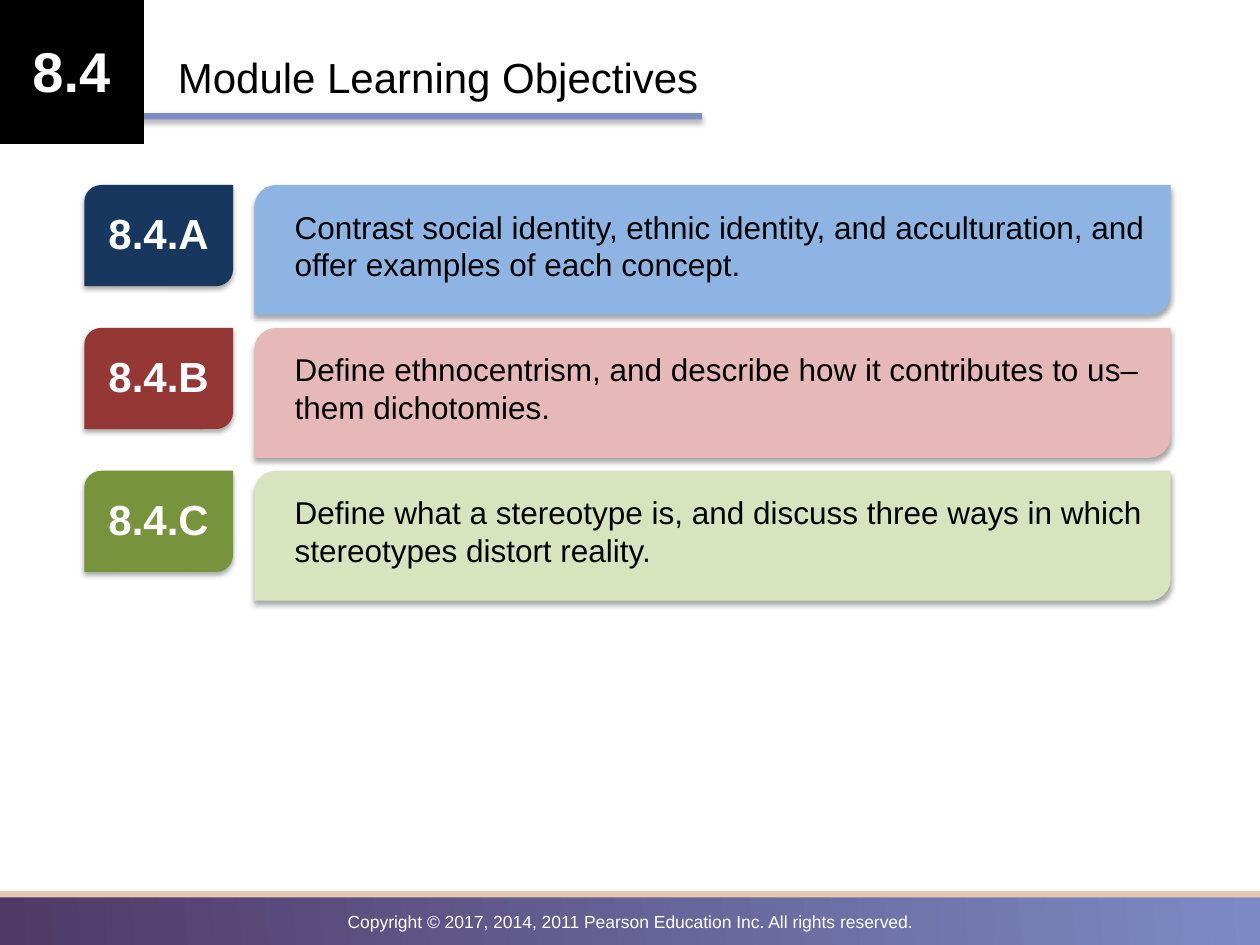
from lxml import etree
from pptx import Presentation
from pptx import util as u
from pptx.dml.color import RGBColor
from pptx.enum import shapes, text
from pptx.oxml.ns import qn

BLACK = RGBColor(0x00, 0x00, 0x00)
WHITE = RGBColor(0xFF, 0xFF, 0xFF)
PURPLE = RGBColor(0x4F, 0x39, 0x67)
PERIWINKLE = RGBColor(0x7C, 0x8B, 0xC4)
PEACH = RGBColor(0xE7, 0xC8, 0xB3)
NAVY = RGBColor(0x17, 0x37, 0x5E)
LIGHT_BLUE = RGBColor(0x8E, 0xB4, 0xE3)
RED = RGBColor(0x95, 0x37, 0x35)
PINK = RGBColor(0xE6, 0xB9, 0xB8)
GREEN = RGBColor(0x77, 0x93, 0x3C)
LIGHT_GREEN = RGBColor(0xD7, 0xE4, 0xBD)

RECT = shapes.MSO_SHAPE.RECTANGLE
TAB = shapes.MSO_SHAPE.ROUND_2_DIAG_RECTANGLE
CENTER = text.PP_ALIGN.CENTER
LEFT = text.PP_ALIGN.LEFT

OBJECTIVES = [
    ("8.4.A", NAVY, LIGHT_BLUE,
     "Contrast social identity, ethnic identity, and acculturation, "
     "and offer examples of each concept."),
    ("8.4.B", RED, PINK,
     "Define ethnocentrism, and describe how it contributes to "
     "us–them dichotomies."),
    ("8.4.C", GREEN, LIGHT_GREEN,
     "Define what a stereotype is, and discuss three ways in which "
     "stereotypes distort reality."),
]
FIRST_ROW = 3.73
ROW_PITCH = 2.88


class ModuleSlide:
    """Holds the text style and the slide being built; lengths are in cm."""
    font = "Arial"

    def __init__(self, slide):
        self.slide = slide

    def shape(self, kind, left, top, width, height, color, shadow=False):
        box = self.slide.shapes.add_shape(
            kind, u.Cm(left), u.Cm(top), u.Cm(width), u.Cm(height))
        box.shadow.inherit = False
        box.fill.solid()
        box.fill.fore_color.rgb = color
        box.line.fill.background()
        if shadow:
            self.drop_shadow(box)
        return box

    def drop_shadow(self, box):
        effects = box._element.spPr.find(qn("a:effectLst"))
        outer = etree.SubElement(
            effects, qn("a:outerShdw"), blurRad="40000", dist="23000",
            dir="5400000", rotWithShape="0")
        color = etree.SubElement(outer, qn("a:srgbClr"), val=str(BLACK))
        etree.SubElement(color, qn("a:alpha"), val="35000")

    def gradient(self, box, start, end, angle):
        box.fill.gradient()
        box.fill.gradient_angle = angle
        for stop, color in zip(box.fill.gradient_stops, (start, end)):
            stop.color.rgb = color

    def text(self, words, left, top, width, height, size, color,
             align=LEFT, bold=False):
        box = self.slide.shapes.add_textbox(
            u.Cm(left), u.Cm(top), u.Cm(width), u.Cm(height))
        self.set_words(box, words, size, color, align, bold)

    def title(self, words, left, top, width, height, size):
        box = self.slide.shapes.title
        box.left, box.top = u.Cm(left), u.Cm(top)
        box.width, box.height = u.Cm(width), u.Cm(height)
        self.set_words(box, words, size, BLACK, LEFT, False)

    def set_words(self, box, words, size, color, align, bold):
        frame = box.text_frame
        frame.text = words
        frame.word_wrap = True
        frame.vertical_anchor = text.MSO_ANCHOR.TOP
        frame.auto_size = text.MSO_AUTO_SIZE.SHAPE_TO_FIT_TEXT
        para = frame.paragraphs[0]
        para.alignment = align
        font = para.runs[0].font
        font.name, font.size, font.bold = self.font, u.Pt(size), bold
        font.color.rgb = color

    def objective(self, top, label, dark, light, words):
        self.shape(TAB, 1.7, top, 3, 2.04, dark, shadow=True)
        self.text(label, 1.7, top + 0.33, 3, 1.28, 24, WHITE, CENTER, True)
        self.shape(TAB, 5.13, top, 18.47, 2.62, light, shadow=True)
        self.text(words, 5.69, top + 0.33, 17.75, 1.8, 18, BLACK)


def main():
    deck = Presentation()
    deck.slide_width, deck.slide_height = u.Cm(25.4), u.Cm(19.05)
    page = ModuleSlide(deck.slides.add_slide(deck.slide_layouts[5]))

    footer = page.shape(RECT, 0, 17.98, 25.4, 1.14, PURPLE)
    page.gradient(footer, PURPLE, PERIWINKLE, 4)
    page.shape(RECT, 0, 17.96, 25.53, 0.13, PEACH)
    page.text("Copyright © 2017, 2014, 2011 Pearson Education Inc. "
              "All rights reserved.",
              0, 18.24, 25.4, 0.69, 10, WHITE, CENTER)

    page.shape(RECT, -0.5, 2.28, 14.65, 0.13, PERIWINKLE, shadow=True)
    page.shape(RECT, -0.02, -0.02, 2.92, 2.92, BLACK)
    page.text("8.4", -0.02, 0.61, 2.92, 1.62, 32, WHITE, CENTER, True)
    page.title("Module Learning Objectives", 3.33, 0.92, 19.58, 1.28, 24)

    for row, objective in enumerate(OBJECTIVES):
        page.objective(FIRST_ROW + row * ROW_PITCH, *objective)

    deck.save("out.pptx")


if __name__ == "__main__":
    main()
